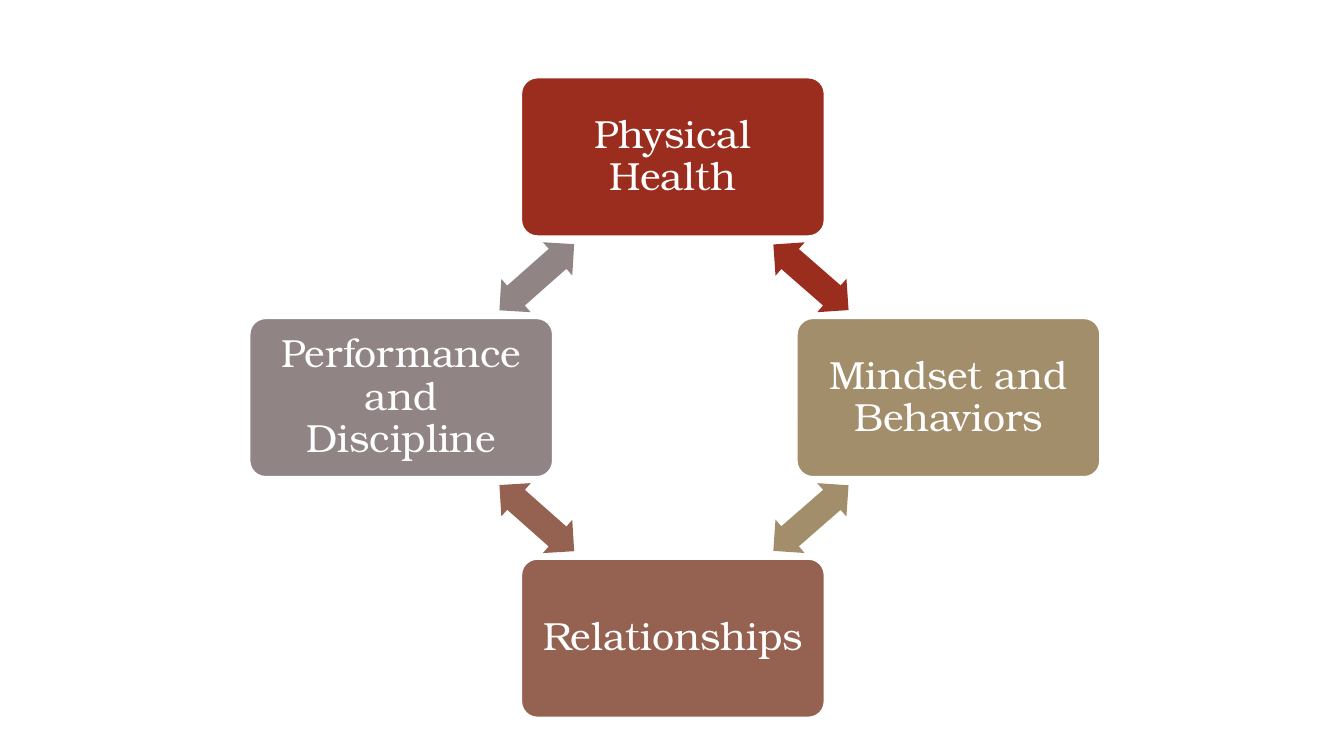
from pptx import Presentation
from pptx.dml.color import RGBColor
from pptx.enum.shapes import MSO_SHAPE as Shape
from pptx.enum.text import MSO_ANCHOR as Anchor, PP_ALIGN as Align
from pptx.util import Pt


def color(value):
    return RGBColor.from_string(value)


def add_filled(kind, left, top, width, height, fill):
    shape = page.shapes.add_shape(kind, Pt(left), Pt(top), Pt(width), Pt(height))
    shape.shadow.inherit = False
    shape.fill.solid()
    shape.fill.fore_color.rgb = color(fill)
    return shape


deck = Presentation()
deck.slide_width, deck.slide_height = Pt(960), Pt(540)
page = deck.slides.add_slide(deck.slide_layouts[6])

box_width, box_height = 216.3, 113
arrow_width, arrow_height = 71.3, 31.7
upper, lower = 182.2, 354.2
west, east = 347.8, 543.6

cycle = [
    ("Physical Health", "9B2D1F", 372.5, 55.6, east, upper, 41.1),
    ("Mindset and Behaviors", "A28E6A", 569.3, 227.5, east, lower, 138.9),
    ("Relationships", "956251", 372.5, 399.4, west, lower, 221.5),
    ("Performance and Discipline", "918485", 178.4, 227.5, west, upper, 318.5),
]

for label, fill, left, top, arrow_left, arrow_top, angle in cycle:
    box = add_filled(Shape.ROUNDED_RECTANGLE, left, top, box_width, box_height, fill)
    box.adjustments[0] = 0.1
    box.line.color.rgb = color("FFFFFF")
    box.line.width = Pt(1)

    frame = box.text_frame
    frame.word_wrap = True
    frame.vertical_anchor = Anchor.MIDDLE
    frame.margin_left = frame.margin_right = Pt(9)
    frame.margin_top = frame.margin_bottom = Pt(9)
    para = frame.paragraphs[0]
    para.text = label
    para.alignment = Align.CENTER
    para.line_spacing = 0.9
    para.font.name = "TeX Gyre Bonum"
    para.font.size = Pt(28)
    para.font.color.rgb = color("FFFFFF")

    arrow = add_filled(Shape.LEFT_RIGHT_ARROW, arrow_left, arrow_top,
                       arrow_width, arrow_height, fill)
    arrow.adjustments[0] = 0.6
    arrow.adjustments[1] = 0.5
    arrow.rotation = angle
    arrow.line.fill.background()

deck.save("out.pptx")
